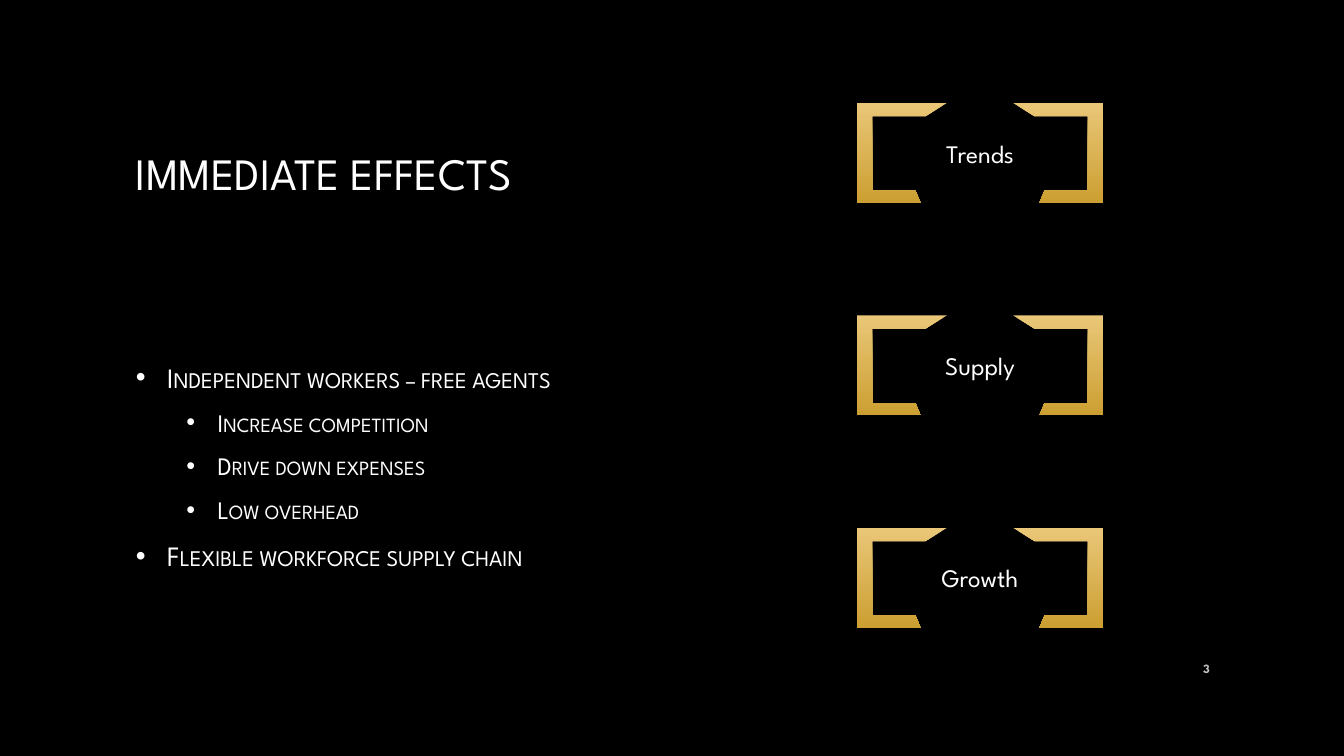
from lxml import etree
from pptx import Presentation
from pptx.dml.color import RGBColor
from pptx.enum.text import MSO_ANCHOR, PP_ALIGN
from pptx.oxml.ns import qn
from pptx.util import Inches, Pt

MIDDLE = MSO_ANCHOR.MIDDLE
LEFT, CENTER, RIGHT = PP_ALIGN.LEFT, PP_ALIGN.CENTER, PP_ALIGN.RIGHT

THEME = {
    "font": "League Spartan",
    "back": "000000", "text": "FFFFFF", "muted": "BFBFBF",
    "gold": ("EAC778", "CC9F32"),
    "title": 32, "body": (20, 18), "label": 18, "number": 9,
}
ROWS = 90

prs = Presentation()
prs.slide_width, prs.slide_height = Inches(13.333), Inches(7.5)
cell = prs.slide_height / ROWS
s = prs.slides.add_slide(prs.slide_layouts[6])
s.background.fill.solid()
s.background.fill.fore_color.rgb = RGBColor.from_string(THEME["back"])


def text_box(col, row, cols, rows):
    tf = s.shapes.add_textbox(*(round(n * cell) for n in (col, row, cols, rows))).text_frame
    tf.word_wrap = True
    tf.vertical_anchor = MIDDLE
    return tf


def write(p, text, size, color="text", align=LEFT, bold=False):
    p.alignment = align
    r = p.add_run()
    r.text = text
    formats = {"name": THEME["font"], "size": Pt(size), "bold": bold}
    for name, value in formats.items():
        setattr(r.font, name, value)
    r.font.color.rgb = RGBColor.from_string(THEME[color])
    return r


tf = text_box(15, 8, 130, 25)
write(tf.paragraphs[0], "IMMEDIATE EFFECTS", THEME["title"])

effects = [
    (0, "Independent workers – free agents"),
    (1, "Increase competition"),
    (1, "Drive down expenses"),
    (1, "Low overhead"),
    (0, "Flexible workforce supply chain"),
]
tf = text_box(15, 35, 58.7, 41)
for i, (level, text) in enumerate(effects):
    p = tf.add_paragraph() if i else tf.paragraphs[0]
    p.level = level
    p.space_after = Pt(6)
    r = write(p, text, THEME["body"][level])
    r.font._element.set("cap", "small")
    pPr = p._p.get_or_add_pPr()
    pPr.set("marL", str(Inches(0.31 + 0.5 * level)))
    pPr.set("indent", str(-Inches(0.31)))
    before = etree.Element(qn("a:spcBef"))
    etree.SubElement(before, qn("a:spcPct"), val="20000")
    pPr.insert(0, before)
    tint = etree.SubElement(pPr, qn("a:buClr"))
    etree.SubElement(tint, qn("a:srgbClr"), val=THEME["text"])
    etree.SubElement(pPr, qn("a:buFont"), typeface="Arial")
    etree.SubElement(pPr, qn("a:buChar"), char="•")

tf = text_box(138, 77.2, 7.2, 4.8)
write(tf.paragraphs[0], "3", THEME["number"], "muted", RIGHT, True)

FRAME_W = 244
left_half = [(0, 0), (89, 0), (68, 13), (15, 13), (15, 87), (58, 87), (63, 99), (0, 99)]
right_half = [(FRAME_W - x, y) for x, y in left_half]
for i, label in enumerate(("Trends", "Supply", "Growth")):
    outline = s.shapes.build_freeform(*left_half[0], scale=Inches(0.01))
    outline.add_line_segments(left_half[1:])
    outline.move_to(*right_half[0])
    outline.add_line_segments(right_half[1:])
    sp = outline.convert_to_shape(round(102.03 * cell), round((12.27 + 25.29 * i) * cell))
    sp.shadow.inherit = False
    sp.line.fill.background()
    sp.fill.gradient()
    sp.fill.gradient_angle = 270
    for stop, color, position in zip(sp.fill.gradient_stops, THEME["gold"], (0, 1)):
        stop.color.rgb = RGBColor.from_string(color)
        stop.position = position
    tf = sp.text_frame
    tf.word_wrap = True
    tf.vertical_anchor = MIDDLE
    write(tf.paragraphs[0], label, THEME["label"], align=CENTER)

prs.save("out.pptx")
